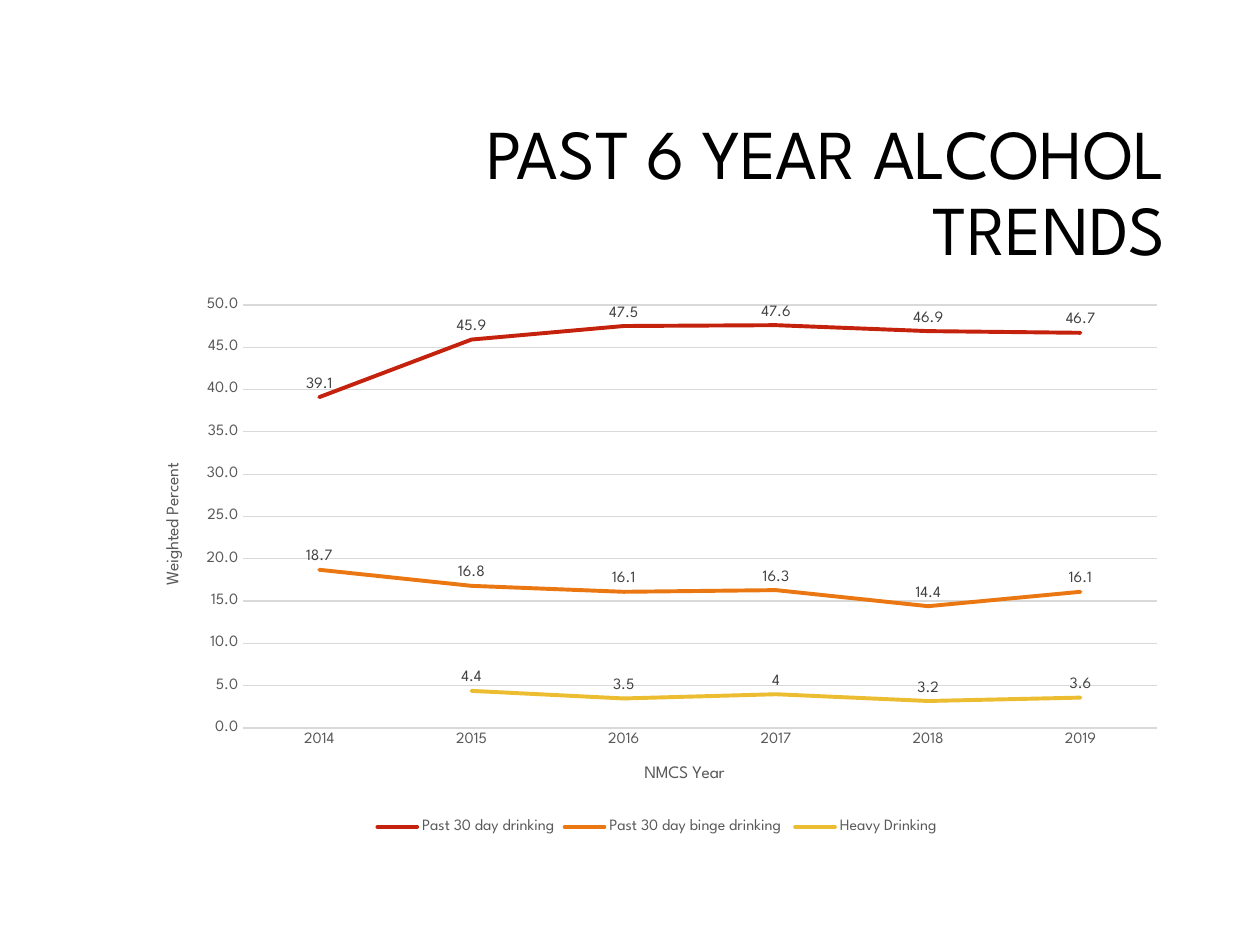
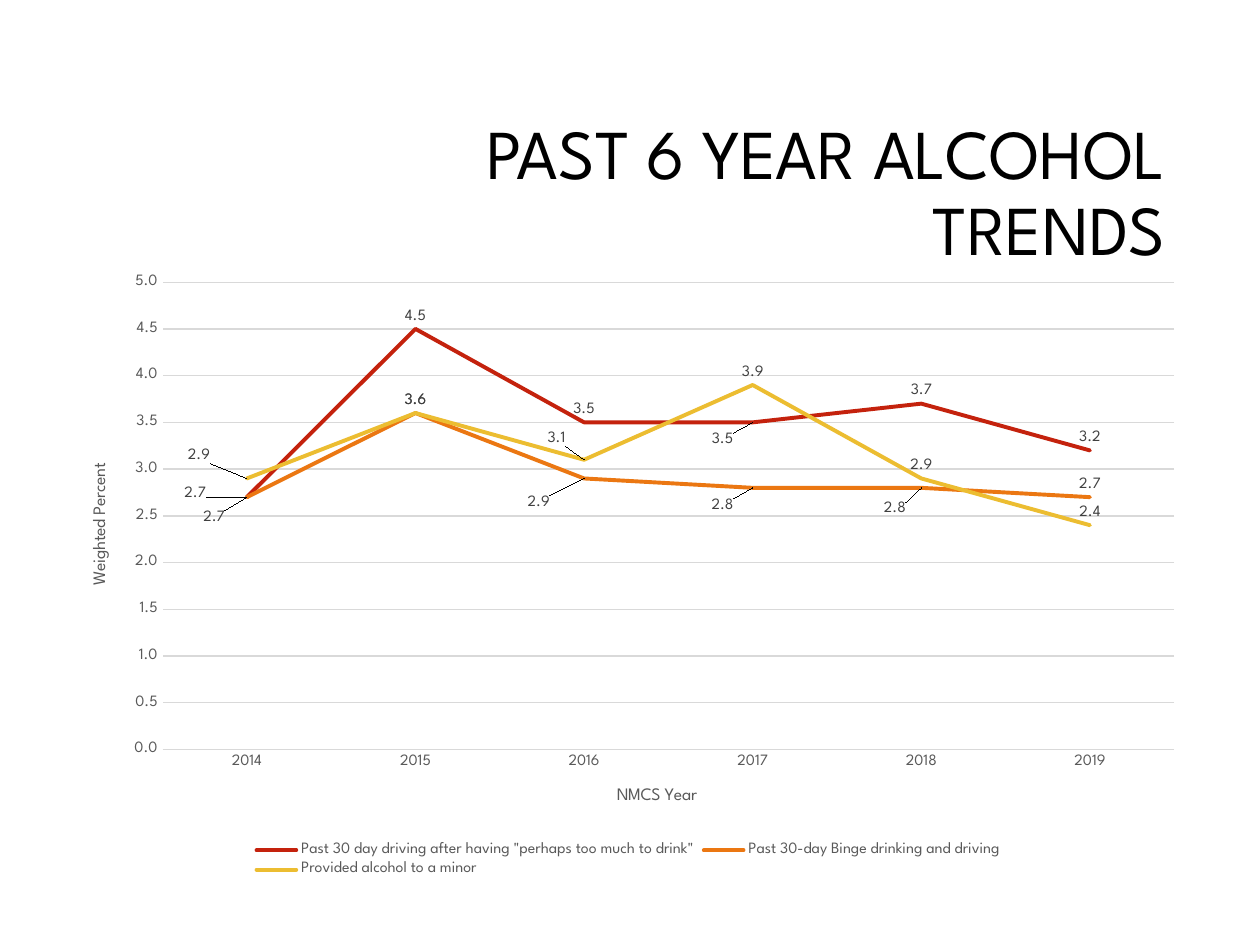
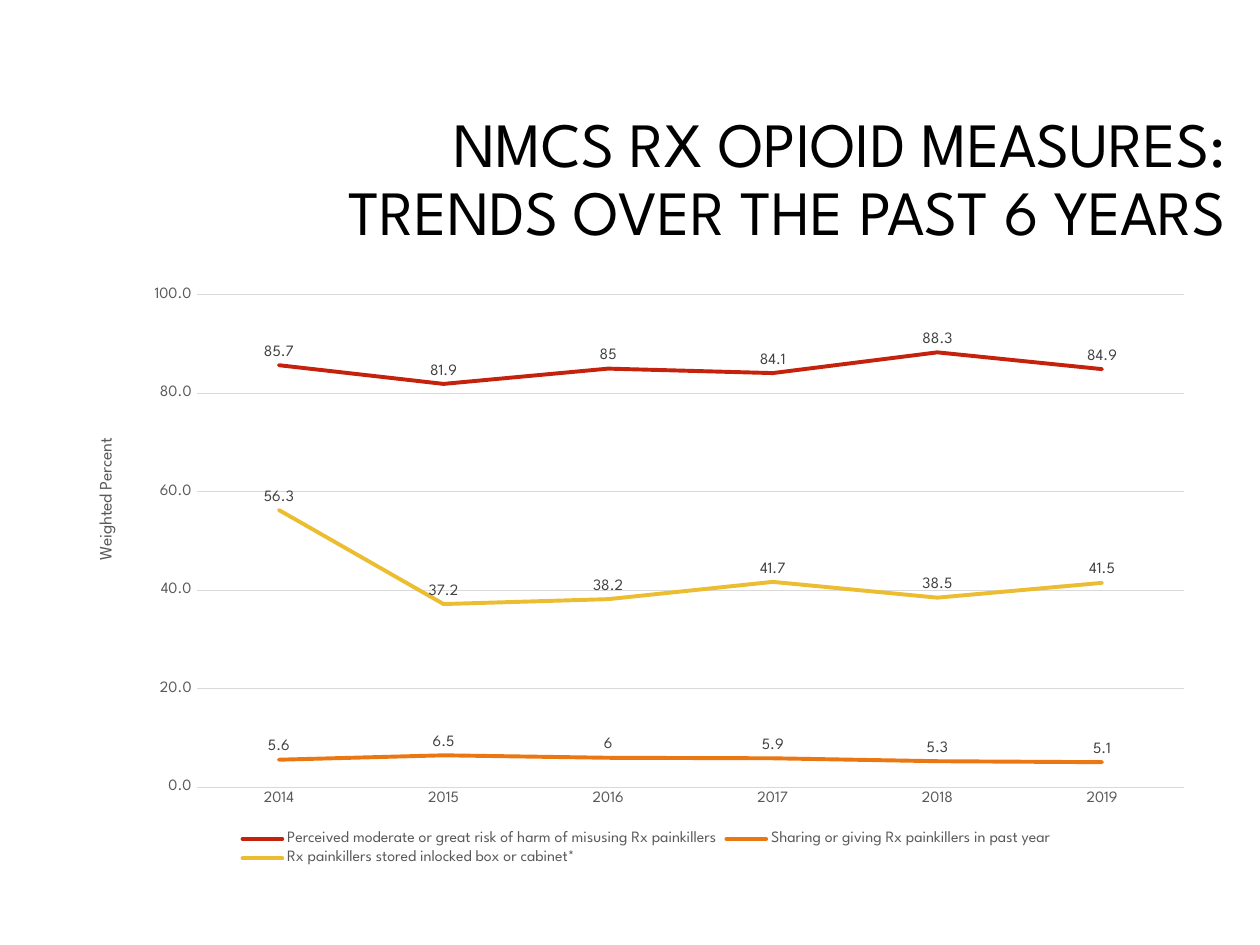
from lxml import etree
from pptx import Presentation
from pptx import util as u
from pptx.chart.data import CategoryChartData
from pptx.dml.color import RGBColor
from pptx.enum import chart as ch, text
from pptx.oxml.ns import qn

FACE = "League Spartan"
YEARS = ["2014", "2015", "2016", "2017", "2018", "2019"]
HUES = ["C4220D", "EB7712", "ECBD31"]
GREY, DARK, GRID = "595959", "404040", "D9D9D9"


def hue(code):
    return RGBColor.from_string(code)


def apply(item, **vals):
    for name, val in vals.items():
        setattr(item, name, val)


def style(font, size, code):
    apply(font, name=FACE, size=u.Pt(size), bold=False)
    font.color.rgb = hue(code)


def stroke(line, code, width):
    line.color.rgb = hue(code)
    line.width = u.Pt(width)


def place(node, spot, vals):
    for old in node.findall(qn("c:layout")):
        node.remove(old)
    lay = etree.Element(qn("c:layout"))
    box = etree.SubElement(lay, qn("c:manualLayout"))
    for tag, val in vals.items():
        etree.SubElement(box, qn("c:" + tag)).set("val", str(val))
    node.insert(spot, lay)


class Deck:
    def __init__(self):
        self.prs = Presentation()
        apply(self.prs, slide_width=u.Inches(10), slide_height=u.Inches(7.5))

    def title(self, words, box, size):
        self.slide = self.prs.slides.add_slide(self.prs.slide_layouts[5])
        head = self.slide.shapes.title
        sides = ("left", "top", "width", "height")
        apply(head, **{k: u.Inches(v) for k, v in zip(sides, box)})
        frame = head.text_frame
        frame.text = words
        apply(frame, word_wrap=True, auto_size=text.MSO_AUTO_SIZE.NONE,
              vertical_anchor=text.MSO_ANCHOR.MIDDLE)
        para = frame.paragraphs[0]
        apply(para, alignment=text.PP_ALIGN.RIGHT, line_spacing=0.9)
        style(para.runs[0].font, size, "000000")

    def chart(self, box, plot, rows, top, step, names, shifts=()):
        data = CategoryChartData()
        data.categories = YEARS
        for name, vals in rows:
            data.add_series(name, vals)
        self.box = box
        frame = self.slide.shapes.add_chart(
            ch.XL_CHART_TYPE.LINE, *map(u.Inches, box), data)
        self.graph = frame.chart
        apply(self.graph, has_title=False, has_legend=True)
        style(self.graph.font, 10, "000000")
        apply(self.graph.legend, position=ch.XL_LEGEND_POSITION.BOTTOM,
              include_in_layout=False)
        style(self.graph.legend.font, 9, GREY)
        self.axes(top, step)
        self.lines()
        self.labels(shifts)
        for tag, (words, left, high) in names.items():
            self.name(tag, words, left, high)
        area = self.graph.element.xpath("//c:plotArea")[0]
        place(area, 0, {"layoutTarget": "inner", **self.edge(*plot[:2]),
                        "w": plot[2] / box[2], "h": plot[3] / box[3]})

    def edge(self, left, high):
        return {"xMode": "edge", "yMode": "edge",
                "x": (left - self.box[0]) / self.box[2],
                "y": (high - self.box[1]) / self.box[3]}

    def axes(self, top, step):
        cat, val = self.graph.category_axis, self.graph.value_axis
        for axis in (cat, val):
            apply(axis, major_tick_mark=ch.XL_TICK_MARK.NONE,
                  minor_tick_mark=ch.XL_TICK_MARK.NONE)
            style(axis.tick_labels.font, 9, GREY)
        stroke(cat.format.line, GRID, 0.75)
        apply(val, minimum_scale=0, maximum_scale=top, major_unit=step,
              has_major_gridlines=True)
        apply(val.tick_labels, number_format="#,##0.0",
              number_format_is_linked=False)
        val.format.line.fill.background()
        stroke(val.major_gridlines.format.line, GRID, 0.75)

    def name(self, tag, words, left, high):
        axes = {"catAx": self.graph.category_axis,
                "valAx": self.graph.value_axis}
        frame = axes[tag].axis_title.text_frame
        frame.text = words
        style(frame.paragraphs[0].runs[0].font, 10, GREY)
        node = self.graph.element.xpath(f"//c:{tag}/c:title")[0]
        if tag == "valAx":
            body = node.find(".//" + qn("a:bodyPr"))
            body.set("rot", "-5400000")
            body.set("vert", "horz")
        place(node, 1, self.edge(left, high))

    def lines(self):
        for row, code in zip(self.graph.plots[0].series, HUES):
            row.smooth = False
            stroke(row.format.line, code, 2.25)
            tags = row.data_labels
            apply(tags, show_value=True,
                  position=ch.XL_LABEL_POSITION.ABOVE)
            style(tags.font, 9, DARK)
        for line in self.graph.element.xpath("//c:ser/c:spPr/a:ln"):
            line.set("cap", "rnd")

    def labels(self, shifts):
        rows = self.graph.plots[0].series
        for row, spot, right, down in shifts:
            tag = rows[row].points[spot].data_label
            style(tag.font, 9, DARK)
            tag.position = ch.XL_LABEL_POSITION.ABOVE
            find = f"//c:ser[{row + 1}]//c:dLbl[c:idx/@val={spot}]"
            node = self.graph.element.xpath(find)[0]
            place(node, 1, {"x": right / self.box[2],
                            "y": down / self.box[3]})


def main():
    deck = Deck()
    trend = "PAST 6 YEAR ALCOHOL TRENDS"
    head = (2.38, 0.84, 6.97, 1.41)
    year, share = "NMCS Year", "Weighted Percent"

    deck.title(trend, head, 40)
    deck.chart(
        (1.08, 2.28, 8.27, 4.38), (1.93, 2.42, 7.25, 3.36),
        [("Past 30 day drinking", [39.1, 45.9, 47.5, 47.6, 46.9, 46.7]),
         ("Past 30 day binge drinking ",
          [18.7, 16.8, 16.1, 16.3, 14.4, 16.1]),
         ("Heavy Drinking", [None, 4.4, 3.5, 4, 3.2, 3.6])],
        50, 5,
        {"catAx": (year, 5.09, 6.04), "valAx": (share, 1.28, 3.65)})

    deck.title(trend, head, 40)
    deck.chart(
        (0.5, 2.08, 9, 4.92), (1.29, 2.24, 8.03, 3.71),
        [('Past 30 day driving after having "perhaps too much to drink"',
          [2.7, 4.5, 3.5, 3.5, 3.7, 3.2]),
         ("Past 30-day Binge drinking and driving ",
          [2.7, 3.6, 2.9, 2.8, 2.8, 2.7]),
         ("Provided alcohol to a minor", [2.9, 3.6, 3.1, 3.9, 2.9, 2.4])],
        5, 0.5,
        {"catAx": (year, 4.87, 6.22), "valAx": (share, 0.7, 3.65)},
        [(0, 0, -0.41, 0.07), (0, 3, -0.24, 0.24),
         (1, 0, -0.26, 0.26), (1, 2, -0.36, 0.29),
         (1, 3, -0.24, 0.24), (1, 4, -0.21, 0.27),
         (2, 0, -0.38, -0.08), (2, 2, -0.22, -0.07)])

    deck.title("NMCS RX OPIOID MEASURES: TRENDS OVER THE PAST 6 YEARS",
               (2.53, 0.58, 7.3, 1.71), 36)
    deck.chart(
        (0.67, 2.19, 8.92, 4.72), (1.56, 2.34, 7.84, 3.91),
        [("Perceived moderate or great risk of harm of misusing "
          "Rx painkillers", [85.7, 81.9, 85, 84.1, 88.3, 84.9]),
         ("Sharing or giving Rx painkillers in past year",
          [5.6, 6.5, 6, 5.9, 5.3, 5.1]),
         ("Rx painkillers stored inlocked box or cabinet*",
          [56.3, 37.2, 38.2, 41.7, 38.5, 41.5])],
        100, 20, {"valAx": (share, 0.75, 3.45)})

    deck.prs.save("out.pptx")


if __name__ == "__main__":
    main()
